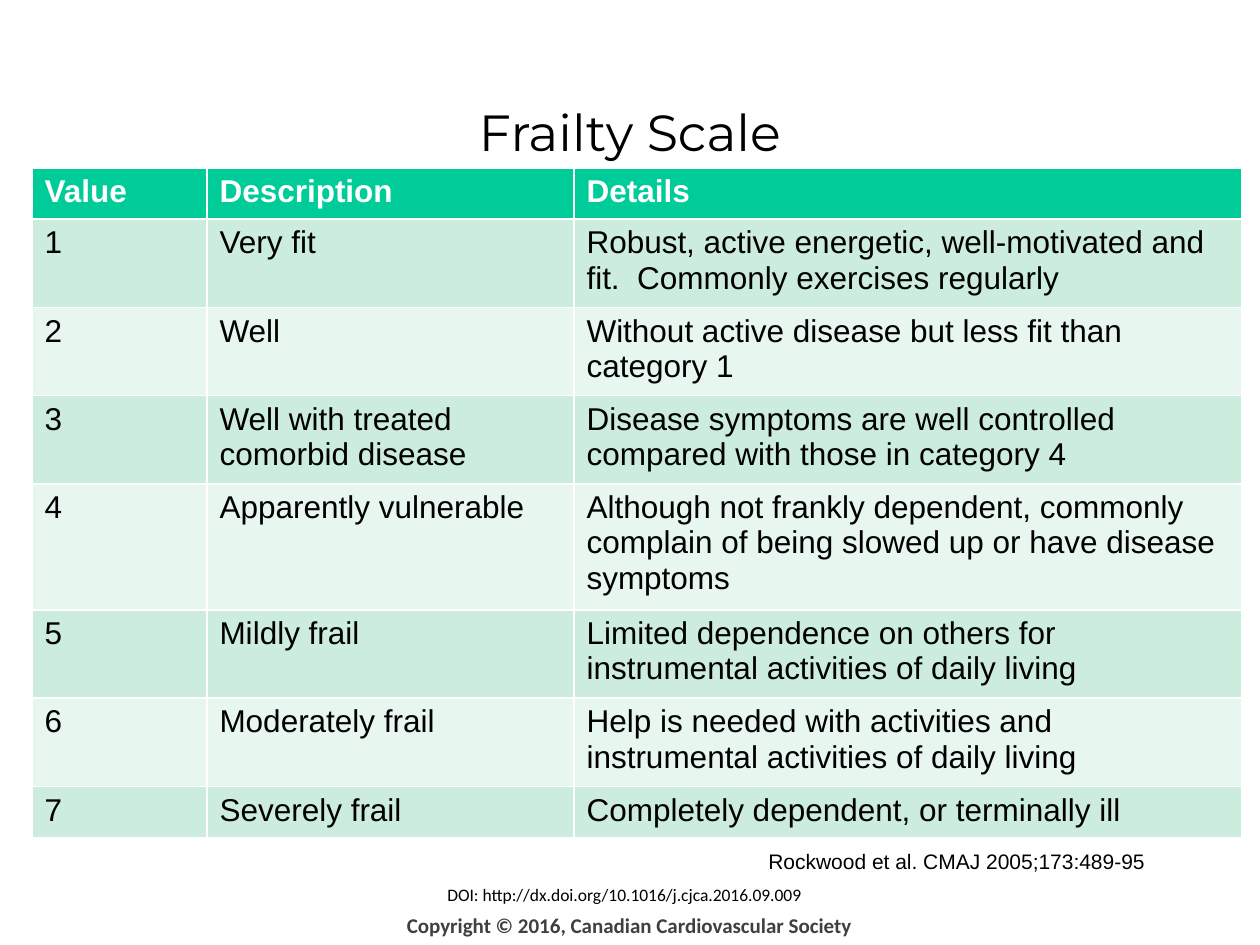
from pptx import Presentation
from pptx.dml.color import RGBColor
from pptx.enum.text import MSO_ANCHOR, MSO_AUTO_SIZE, PP_ALIGN
from pptx.util import Emu, Pt

PIXELS_PER_INCH = 126
COLORS = {
    "text": "000000",
    "copyright": "404040",
    "header_text": "FFFFFF",
    "header_fill": "00CC99",
    "odd_row": "CCECDE",
    "even_row": "E7F6EF",
}
COLUMN_WIDTHS = [175, 367, 668]
HEADER_HEIGHT = 51
FRAILTY_ROWS = [
    (HEADER_HEIGHT, "Value", "Description", "Details"),
    (88, "1", "Very fit",
     "Robust, active energetic, well-motivated and fit.  Commonly exercises regularly"),
    (88, "2", "Well", "Without active disease but less fit than category 1"),
    (88, "3", "Well with treated comorbid disease",
     "Disease symptoms are well controlled compared with those in category 4"),
    (126, "4", "Apparently vulnerable",
     "Although not frankly dependent, commonly complain of being slowed up "
     "or have disease symptoms"),
    (88, "5", "Mildly frail",
     "Limited dependence on others for instrumental activities of daily living"),
    (88, "6", "Moderately frail",
     "Help is needed with activities and instrumental activities of daily living"),
    (HEADER_HEIGHT, "7", "Severely frail", "Completely dependent, or terminally ill"),
]


def px(length):
    return Emu(round(length * 914400 / PIXELS_PER_INCH))


def color(name):
    return RGBColor.from_string(COLORS[name])


def set_text(text_frame, text, size, font_name, color_name="text",
             bold=False, alignment=PP_ALIGN.LEFT):
    text_frame.text = text
    paragraph = text_frame.paragraphs[0]
    paragraph.alignment = alignment
    font = paragraph.runs[0].font
    font.size = Pt(size)
    font.name = font_name
    font.bold = bold
    font.color.rgb = color(color_name)


def add_title(slide, text):
    title = slide.shapes.title
    title.left, title.top, title.width, title.height = map(px, (63, 94, 1134, 158))
    title.text_frame.vertical_anchor = MSO_ANCHOR.TOP
    title.text_frame.auto_size = MSO_AUTO_SIZE.NONE
    set_text(title.text_frame, text, 29, "Montserrat", alignment=PP_ALIGN.CENTER)


def add_label(slide, box, text, size, font_name, **style):
    text_box = slide.shapes.add_textbox(*map(px, box))
    text_box.text_frame.word_wrap = True
    set_text(text_box.text_frame, text, size, font_name, **style)


def add_frailty_table(slide, left, top):
    """The default table style supplies the white rules between cells."""
    heights = [row[0] for row in FRAILTY_ROWS]
    table = slide.shapes.add_table(
        len(heights), len(COLUMN_WIDTHS),
        px(left), px(top), px(sum(COLUMN_WIDTHS)), px(sum(heights))).table
    for column, width in zip(table.columns, COLUMN_WIDTHS):
        column.width = px(width)
    for index, (height, *texts) in enumerate(FRAILTY_ROWS):
        row = table.rows[index]
        row.height = px(height)
        is_header = index == 0
        if is_header:
            fill_name = "header_fill"
        else:
            fill_name = "odd_row" if index % 2 else "even_row"
        for cell, text in zip(row.cells, texts):
            cell.fill.solid()
            cell.fill.fore_color.rgb = color(fill_name)
            set_text(cell.text_frame, text, 18, "Arial",
                     "header_text" if is_header else "text", bold=is_header)


def main():
    presentation = Presentation()
    presentation.slide_width = px(1260)
    presentation.slide_height = px(945)
    slide = presentation.slides.add_slide(presentation.slide_layouts[5])

    add_label(slide, (223, 906, 813, 39),
              "Copyright © 2016, Canadian Cardiovascular Society", 12, "Calibri",
              color_name="copyright", bold=True, alignment=PP_ALIGN.CENTER)
    add_label(slide, (435, 878, 388, 34),
              "DOI: http://dx.doi.org/10.1016/j.cjca.2016.09.009", 10, "Calibri")
    add_title(slide, "Frailty Scale")
    add_frailty_table(slide, 32, 168)
    add_label(slide, (756, 842, 431, 38),
              "Rockwood et al. CMAJ 2005;173:489-95", 12, "Arial")
    presentation.save("out.pptx")


if __name__ == "__main__":
    main()
